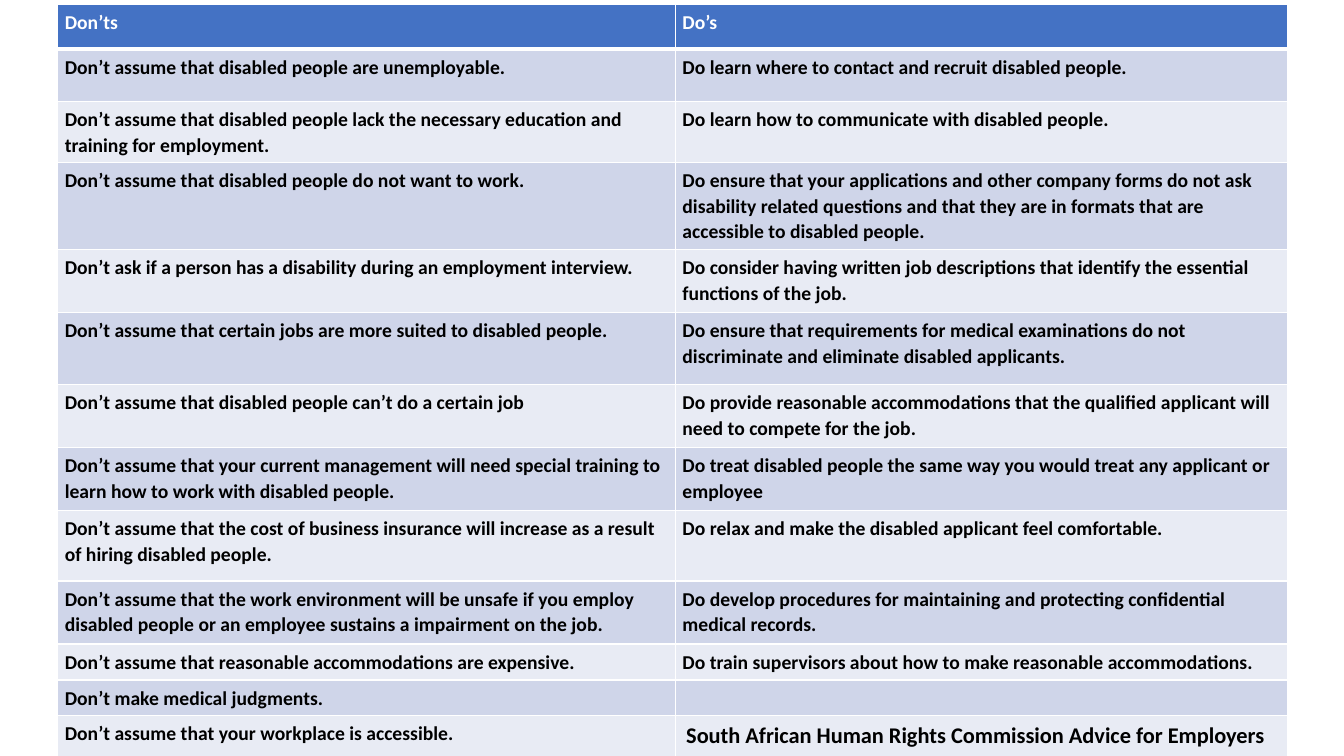
from lxml import etree
from pptx import Presentation
from pptx.dml.color import RGBColor
from pptx.oxml.ns import qn
from pptx.util import Pt

FONT = "Calibri"
WHITE, BLACK, BLUE = "FFFFFF", "000000", "4472C4"
BANDS = ["CFD5E9", "E8EBF4"]
WIDTHS = [441.2, 437.2]
HEIGHTS = [32, 37.5, 43.7, 62, 45, 51.5, 45, 45, 50.5, 45, 25.7, 25.2, 29]
INSETS = {"margin_left": 5, "margin_right": 5, "margin_top": 3.6, "margin_bottom": 3.6}
ADVICE = [
    ("Don’ts", "Do’s"),
    ("Don’t assume that disabled people are unemployable.",
     "Do learn where to contact and recruit disabled people."),
    ("Don’t assume that disabled people lack the necessary education and training for employment.",
     "Do learn how to communicate with disabled people."),
    ("Don’t assume that disabled people do not want to work.",
     "Do ensure that your applications and other company forms do not ask disability related "
     "questions and that they are in formats that are accessible to disabled people."),
    ("Don’t ask if a person has a disability during an employment interview.",
     "Do consider having written job descriptions that identify the essential functions of the job."),
    ("Don’t assume that certain jobs are more suited to disabled people.",
     "Do ensure that requirements for medical examinations do not discriminate and eliminate "
     "disabled applicants."),
    ("Don’t assume that disabled people can’t do a certain job",
     "Do provide reasonable accommodations that the qualified applicant will need to compete "
     "for the job."),
    ("Don’t assume that your current management will need special training to learn how to work "
     "with disabled people.",
     "Do treat disabled people the same way you would treat any applicant or employee"),
    ("Don’t assume that the cost of business insurance will increase as a result of hiring "
     "disabled people.",
     "Do relax and make the disabled applicant feel comfortable."),
    ("Don’t assume that the work environment will be unsafe if you employ disabled people or an "
     "employee sustains a impairment on the job.",
     "Do develop procedures for maintaining and protecting confidential medical records."),
    ("Don’t assume that reasonable accommodations are expensive.",
     "Do train supervisors about how to make reasonable accommodations."),
    ("Don’t make medical judgments.", ""),
    ("Don’t assume that your workplace is accessible.",
     "South African Human Rights Commission Advice for Employers"),
]


def color(value):
    """Turn a hex string into a colour."""
    return RGBColor.from_string(value)


def assign(target, values):
    """Set each named attribute on the target."""
    for name, value in values.items():
        setattr(target, name, value)


def edge(cell, side, width):
    """Draw one white border of a cell."""
    props = cell._tc.get_or_add_tcPr()
    line = etree.SubElement(props, qn("a:ln" + side), w=str(Pt(width)))
    fill = etree.SubElement(line, qn("a:solidFill"))
    etree.SubElement(fill, qn("a:srgbClr"), val=WHITE)


def write(cell, text, ink, size):
    """Put bold text into a cell, or size its empty line."""
    para = cell.text_frame.paragraphs[0]
    assign(para, {"line_spacing": 1.07, "space_after": Pt(8)})
    if not text:
        etree.SubElement(para._p, qn("a:endParaRPr"), sz=str(size * 100))
        return
    run = para.add_run()
    run.text = text
    assign(run.font, {"name": FONT, "size": Pt(size), "bold": True})
    run.font.color.rgb = color(ink)


def style(cell, fill, base):
    """Set the insets, borders and fill of a cell."""
    assign(cell, {name: Pt(value) for name, value in INSETS.items()})
    for side, width in zip("LRTB", (0.96, 0.96, 0.96, base)):
        edge(cell, side, width)
    cell.fill.solid()
    cell.fill.fore_color.rgb = color(fill)


def grid(slide):
    """Add the table of advice."""
    frame = slide.shapes.add_table(len(ADVICE), len(WIDTHS), Pt(41.3), Pt(3),
                                   Pt(sum(WIDTHS)), Pt(sum(HEIGHTS)))
    table = frame.table
    for col, width in zip(table.columns, WIDTHS):
        col.width = Pt(width)
    for row, height in zip(table.rows, HEIGHTS):
        row.height = Pt(height)
    for row, pair in enumerate(ADVICE):
        head = row == 0
        for col, text in enumerate(pair):
            cell = table.cell(row, col)
            style(cell, BLUE if head else BANDS[(row - 1) % 2], 3 if head else 0.96)
            source = row == len(ADVICE) - 1 and col == 1
            write(cell, text, WHITE if head else BLACK, 16 if source else 14)
            if source:
                cell.margin_left = Pt(7.7)


def main():
    """Build the slide and save it."""
    deck = Presentation()
    assign(deck, {"slide_width": Pt(960), "slide_height": Pt(540)})
    grid(deck.slides.add_slide(deck.slide_layouts[6]))
    deck.save("out.pptx")


if __name__ == "__main__":
    main()
